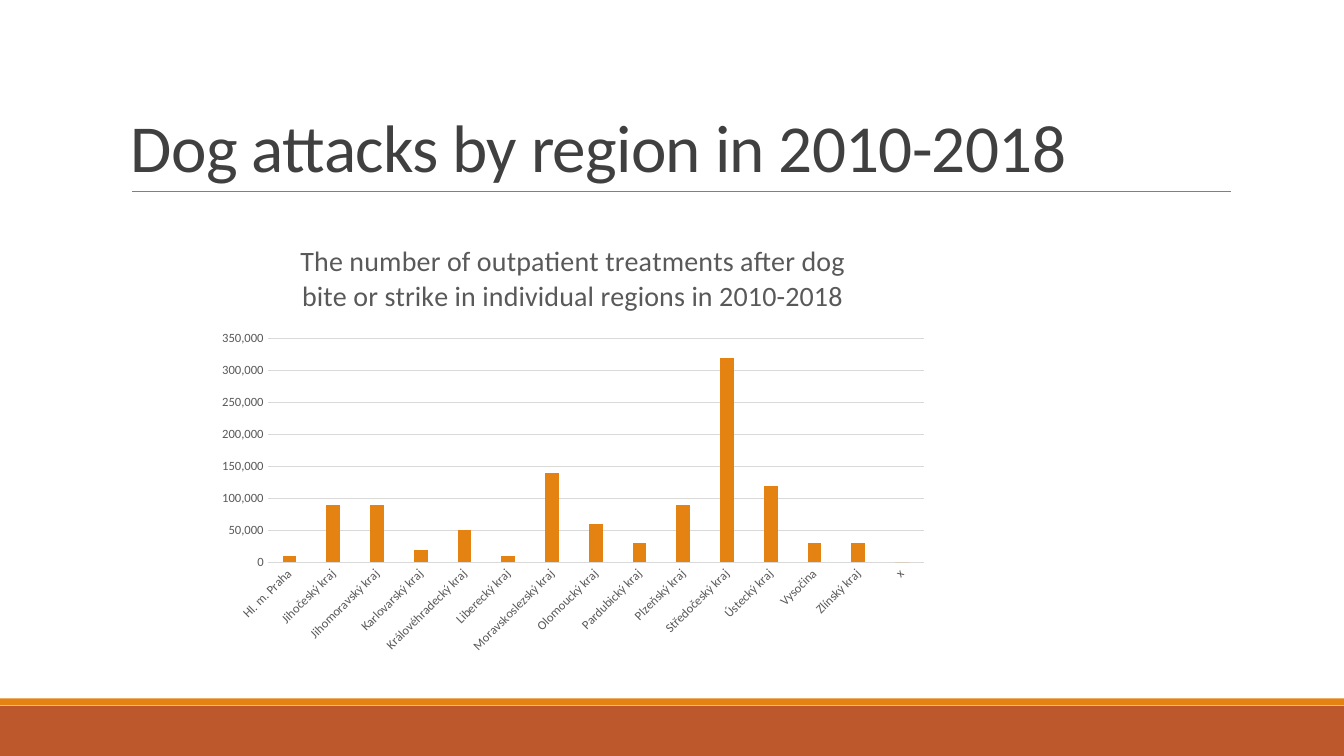
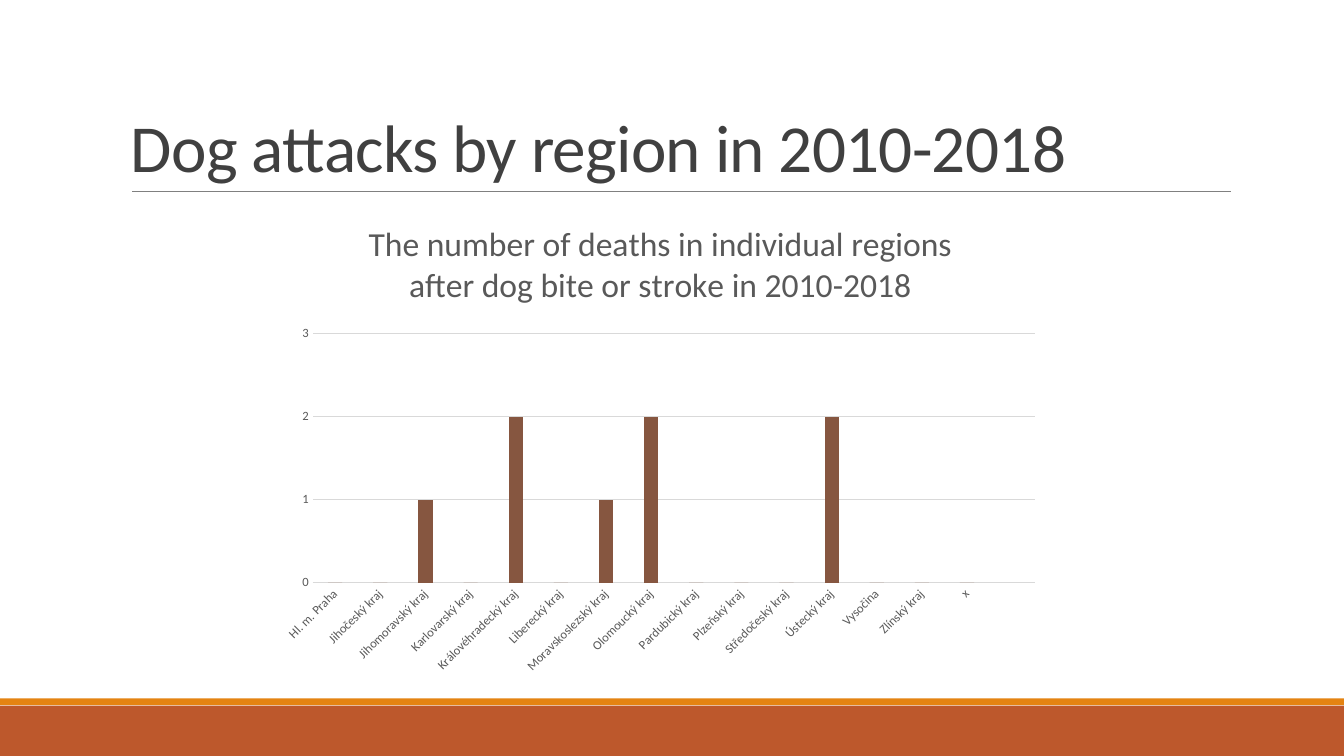
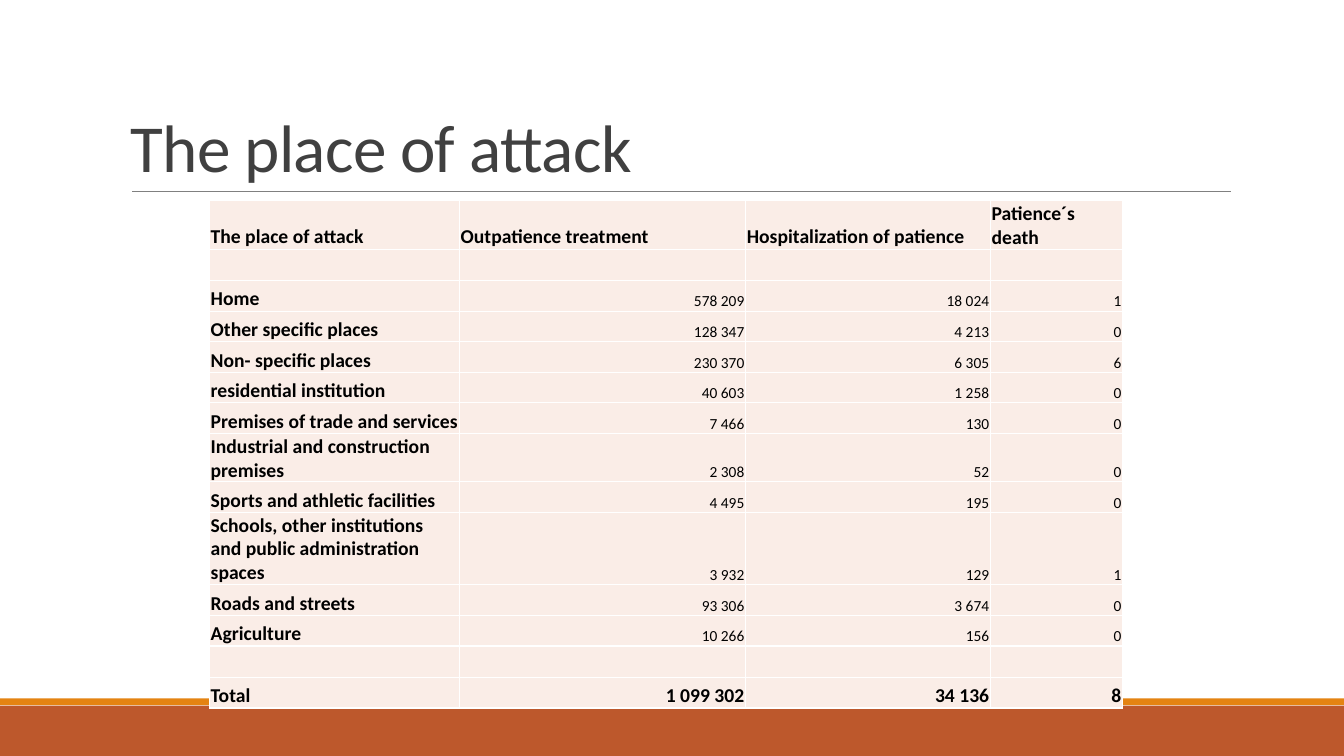
from dataclasses import dataclass
from typing import Optional

from lxml.etree import SubElement
from pptx import Presentation
from pptx.chart.data import CategoryChartData
from pptx.dml.color import RGBColor
from pptx.enum.chart import XL_CHART_TYPE, XL_TICK_MARK
from pptx.enum.shapes import MSO_CONNECTOR, MSO_SHAPE
from pptx.enum.text import MSO_ANCHOR, PP_ALIGN
from pptx.oxml.ns import qn
from pptx.presentation import Presentation as Deck
from pptx.slide import Slide
from pptx.text.text import Font, TextFrame
from pptx.util import Cm, Pt


@dataclass(frozen=True)
class Theme:
    """Colours, font and type sizes of the deck."""

    font: str = "Calibri"
    rust: str = "BD582C"
    orange: str = "E48312"
    brown: str = "865640"
    title_ink: str = "404040"
    chart_ink: str = "595959"
    table_ink: str = "000000"
    rule: str = "808080"
    grid: str = "D9D9D9"
    cell_fill: str = "FAEDE7"
    cell_border: str = "FFFFFF"
    title_size: float = 48
    label_size: float = 14
    number_size: float = 11
    axis_size: float = 9


@dataclass(frozen=True)
class Box:
    """A rectangle in centimetres."""

    left: float
    top: float
    width: float
    height: float

    def lengths(self) -> tuple[Cm, Cm, Cm, Cm]:
        """Return left, top, width and height as lengths."""
        return Cm(self.left), Cm(self.top), Cm(self.width), Cm(self.height)


@dataclass(frozen=True)
class Band:
    """A filled strip at the foot of each slide."""

    box: Box
    color: str


@dataclass(frozen=True)
class RegionChart:
    """A column chart of one value per region."""

    title: str
    title_size: float
    box: Box
    color: str
    categories: list[str]
    values: list[Optional[int]]
    step: int
    maximum: int


THEME = Theme()
PAGE_WIDTH, PAGE_HEIGHT = 33.87, 19.05
BANDS = [
    Band(Box(0, 17.78, PAGE_WIDTH, 1.27), THEME.rust),
    Band(Box(0, 17.6, PAGE_WIDTH, 0.17), THEME.orange),
]
TITLE_BOX = Box(3.05, 0.79, 27.94, 4.03)
RULE_LEFT, RULE_RIGHT, RULE_TOP = 3.33, 31.01, 4.83

REGIONS = [
    "Hl. m. Praha", "Jihočeský kraj", "Jihomoravský kraj", "Karlovarský kraj",
    "Královéhradecký kraj", "Liberecký kraj", "Moravskoslezský kraj", "Olomoucký kraj",
    "Pardubický kraj", "Plzeňský kraj", "Středočeský kraj", "Ústecký kraj",
    "Vysočina", "Zlínský kraj", "x",
]
REGION_TITLE = "Dog attacks by region in 2010-2018"
REGION_CHARTS = [
    RegionChart(
        "The number of outpatient treatments after dog bite or strike in individual regions in 2010-2018",
        20, Box(5.23, 5.59, 18.42, 11.1), THEME.orange, REGIONS,
        [10000, 90000, 90000, 20000, 50000, 10000, 140000, 60000,
         30000, 90000, 320000, 120000, 30000, 30000, 0],
        50000, 350000,
    ),
    RegionChart(
        "The number of deaths in individual regions after dog bite or stroke in 2010-2018",
        24, Box(6.81, 5.03, 19.66, 12.19), THEME.brown, REGIONS + [""],
        [0, 0, 1, 0, 2, 0, 1, 2, 0, 0, 0, 2, 0, 0, 0, None],
        1, 3,
    ),
]

PLACE_TITLE = "The place of attack"
BLANK_ROW = ("", "", "", "")
PLACE_ROWS = [
    ("The place of attack", "Outpatience treatment", "Hospitalization of patience", "Patience´s death"),
    BLANK_ROW,
    ("Home", "578 209", "18 024", "1"),
    ("Other specific places", "128 347", "4 213", "0"),
    ("Non- specific places", "230 370", "6 305", "6"),
    ("residential institution", "40 603", "1 258", "0"),
    ("Premises of trade and services", "7 466", "130", "0"),
    ("Industrial and construction premises", "2 308", "52", "0"),
    ("Sports and athletic facilities", "4 495", "195", "0"),
    ("Schools, other institutions and public administration spaces", "3 932", "129", "1"),
    ("Roads and streets", "93 306", "3 674", "0"),
    ("Agriculture", "10 266", "156", "0"),
    BLANK_ROW,
    ("Total", "1 099 302", "34 136", "8"),
]
PLACE_COLUMNS = [6.3, 7.21, 6.17, 3.33]
ROW_HEIGHT = 0.77
TALL_ROWS = {0: 1.2, 7: 1.2, 9: 1.83}


def rgb(color: str) -> RGBColor:
    """Turn a hex string into a colour."""
    return RGBColor.from_string(color)


def style_font(font: Font, size: float, color: str, bold: bool = False) -> None:
    """Set face, size, colour and weight of a font."""
    font.name = THEME.font
    font.size = Pt(size)
    font.bold = bold
    font.color.rgb = rgb(color)


def write_text(
    frame: TextFrame, text: str, *, size: float, color: str, bold: bool = False,
    align: PP_ALIGN = PP_ALIGN.LEFT, line_spacing: float = 1.0, tracking: float = 0,
) -> None:
    """Write one formatted paragraph into a text frame."""
    para = frame.paragraphs[0]
    para.alignment = align
    para.line_spacing = line_spacing
    span = para.add_run()
    span.text = text
    style_font(span.font, size, color, bold)
    if tracking:
        span.font._element.set("spc", str(round(tracking * 100)))


def add_page(deck: Deck, title: str) -> Slide:
    """Add a blank slide with bands, rule and title."""
    page = deck.slides.add_slide(deck.slide_layouts[6])
    for band in BANDS:
        strip = page.shapes.add_shape(MSO_SHAPE.RECTANGLE, *band.box.lengths())
        strip.shadow.inherit = False
        strip.fill.solid()
        strip.fill.fore_color.rgb = rgb(band.color)
        strip.line.fill.background()
    rule = page.shapes.add_connector(
        MSO_CONNECTOR.STRAIGHT, Cm(RULE_LEFT), Cm(RULE_TOP), Cm(RULE_RIGHT), Cm(RULE_TOP)
    )
    rule.line.color.rgb = rgb(THEME.rule)
    rule.line.width = Pt(0.5)
    SubElement(rule._element.spPr, qn("a:effectLst"))
    frame = page.shapes.add_textbox(*TITLE_BOX.lengths()).text_frame
    frame.word_wrap = True
    frame.vertical_anchor = MSO_ANCHOR.BOTTOM
    write_text(frame, title, size=THEME.title_size, color=THEME.title_ink,
               line_spacing=0.85, tracking=-0.5)
    return page


def add_region_chart(page: Slide, region_chart: RegionChart) -> None:
    """Draw a column chart by region."""
    data = CategoryChartData(number_format="#,##0")
    data.categories = region_chart.categories
    data.add_series("Series 1", region_chart.values)
    chart = page.shapes.add_chart(
        XL_CHART_TYPE.COLUMN_CLUSTERED, *region_chart.box.lengths(), data
    ).chart
    chart.has_legend = False
    style_font(chart.font, 10, THEME.table_ink)
    chart.has_title = True
    chart.chart_title.include_in_layout = False
    write_text(chart.chart_title.text_frame, region_chart.title, size=region_chart.title_size,
               color=THEME.chart_ink, align=PP_ALIGN.CENTER)

    plot = chart.plots[0]
    plot.gap_width = 219
    plot.overlap = -27
    plot.vary_by_categories = False
    fill = plot.series[0].format.fill
    fill.solid()
    fill.fore_color.rgb = rgb(region_chart.color)

    for axis in (chart.category_axis, chart.value_axis):
        axis.major_tick_mark = XL_TICK_MARK.NONE
        axis.minor_tick_mark = XL_TICK_MARK.NONE
        style_font(axis.tick_labels.font, THEME.axis_size, THEME.chart_ink)
    values = chart.value_axis
    values.minimum_scale = 0
    values.maximum_scale = region_chart.maximum
    values.major_unit = region_chart.step
    values.tick_labels.number_format = "#,##0"
    values.tick_labels.number_format_is_linked = False
    values.format.line.fill.background()
    for line in (chart.category_axis.format.line, values.major_gridlines.format.line):
        line.color.rgb = rgb(THEME.grid)
        line.width = Pt(0.75)
    label_body = chart.category_axis._element.find(qn("c:txPr")).find(qn("a:bodyPr"))
    label_body.set("rot", "-2700000")
    label_body.set("vert", "horz")


def style_cell(cell) -> None:
    """Set insets, anchor, borders and fill of a table cell."""
    cell.margin_left = cell.margin_right = cell.margin_top = Cm(0.03)
    cell.margin_bottom = 0
    cell.vertical_anchor = MSO_ANCHOR.BOTTOM
    properties = cell._tc.get_or_add_tcPr()
    for side in ("a:lnL", "a:lnR", "a:lnT", "a:lnB"):
        border = SubElement(properties, qn(side), w=str(Pt(1)))
        paint = SubElement(border, qn("a:solidFill"))
        SubElement(paint, qn("a:srgbClr"), val=THEME.cell_border)
    cell.fill.solid()
    cell.fill.fore_color.rgb = rgb(THEME.cell_fill)


def add_place_table(page: Slide) -> None:
    """Draw the table of attacks by place."""
    heights = [TALL_ROWS.get(index, ROW_HEIGHT) for index in range(len(PLACE_ROWS))]
    box = Box(5.28, 5.06, sum(PLACE_COLUMNS), sum(heights))
    table = page.shapes.add_table(len(PLACE_ROWS), len(PLACE_COLUMNS), *box.lengths()).table
    for column, width in zip(table.columns, PLACE_COLUMNS):
        column.width = Cm(width)
    last = len(PLACE_ROWS) - 1
    for row_index, texts in enumerate(PLACE_ROWS):
        table.rows[row_index].height = Cm(heights[row_index])
        for column_index, text in enumerate(texts):
            cell = table.cell(row_index, column_index)
            style_cell(cell)
            is_number = row_index > 0 and column_index > 0
            strong = not is_number or row_index == last
            write_text(
                cell.text_frame, text, color=THEME.table_ink, bold=strong,
                size=THEME.label_size if strong else THEME.number_size,
                align=PP_ALIGN.RIGHT if is_number else PP_ALIGN.LEFT,
            )


def main() -> None:
    """Build and save the deck."""
    deck = Presentation()
    deck.slide_width, deck.slide_height = Cm(PAGE_WIDTH), Cm(PAGE_HEIGHT)
    for region_chart in REGION_CHARTS:
        add_region_chart(add_page(deck, REGION_TITLE), region_chart)
    add_place_table(add_page(deck, PLACE_TITLE))
    deck.save("out.pptx")


if __name__ == "__main__":
    main()
